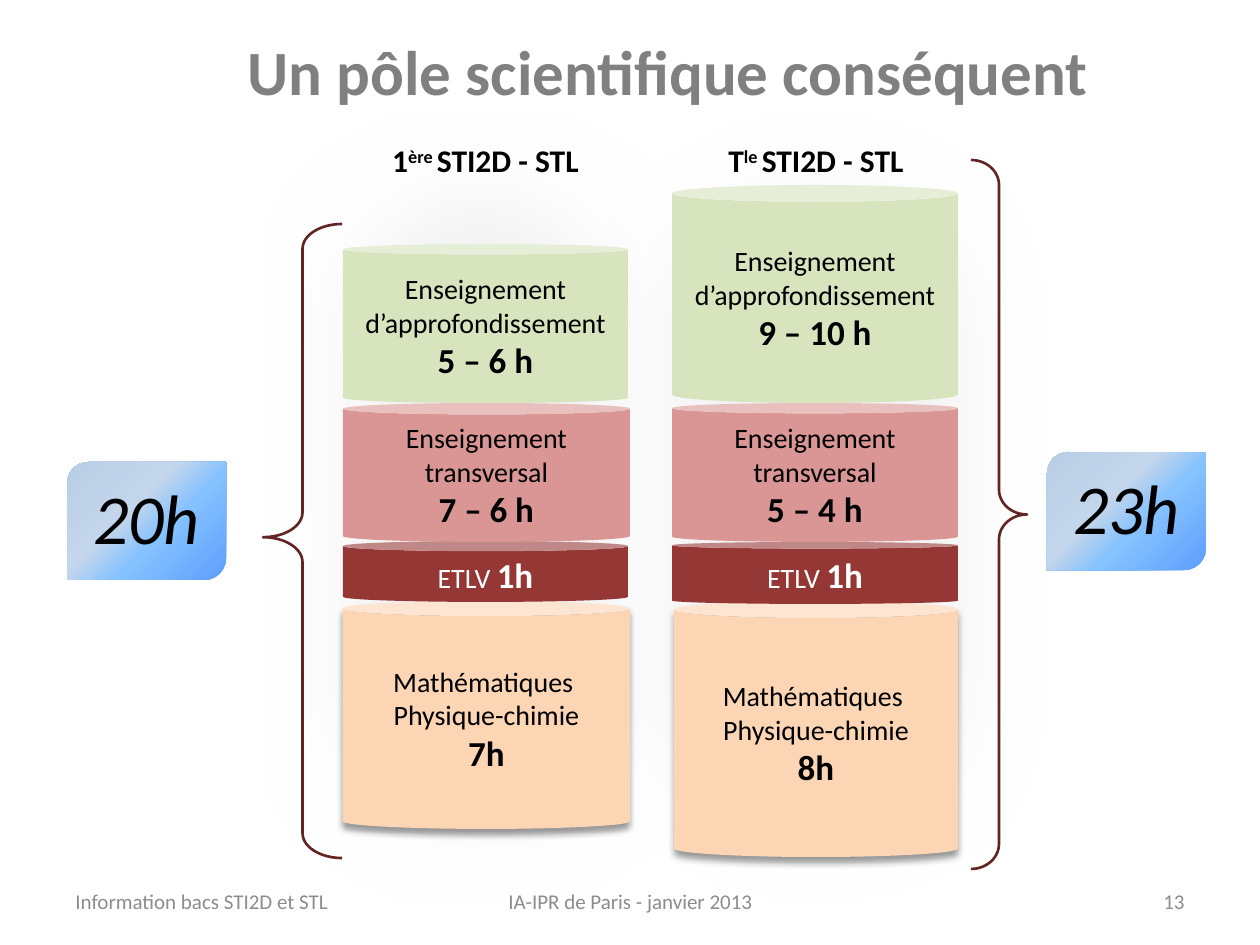
from lxml import etree
from pptx import Presentation
from pptx.dml.color import RGBColor
from pptx.enum.shapes import MSO_SHAPE
from pptx.enum.text import MSO_ANCHOR, MSO_AUTO_SIZE, PP_ALIGN
from pptx.oxml import parse_xml
from pptx.oxml.ns import qn
from pptx.util import Emu, Pt

PX = 914400 / 126
NAMESPACE = "http://schemas.openxmlformats.org/drawingml/2006/main"
CAN, DISK = MSO_SHAPE.CAN, MSO_SHAPE.FLOWCHART_MAGNETIC_DISK
LEFT_BRACE, RIGHT_BRACE = MSO_SHAPE.LEFT_BRACE, MSO_SHAPE.RIGHT_BRACE
BADGE = MSO_SHAPE.ROUND_2_DIAG_RECTANGLE
LEFT, CENTER, RIGHT = PP_ALIGN.LEFT, PP_ALIGN.CENTER, PP_ALIGN.RIGHT
TOP, MIDDLE = MSO_ANCHOR.TOP, MSO_ANCHOR.MIDDLE

BLACK = RGBColor(0x00, 0x00, 0x00)
WHITE = RGBColor(0xFF, 0xFF, 0xFF)
TITLE_GREY = RGBColor(0x80, 0x80, 0x80)
FOOTER_GREY = RGBColor(0x8C, 0x8C, 0x8C)
DISK_GREY = RGBColor(0xF2, 0xF2, 0xF2)
ORANGE = RGBColor(0xFC, 0xD5, 0xB5)
DARK_RED = RGBColor(0x95, 0x37, 0x35)
PINK = RGBColor(0xD9, 0x96, 0x94)
GREEN = RGBColor(0xD7, 0xE4, 0xBD)
BRACE_RED = RGBColor(0x63, 0x25, 0x23)
BADGE_STOPS = [(0, RGBColor(0x5E, 0x9E, 0xFF)), (40, RGBColor(0x85, 0xC2, 0xFF)),
               (60, RGBColor(0xC4, 0xD6, 0xEB)), (100, RGBColor(0xB9, 0xCD, 0xE5))]

TITLE = "Un pôle scientifique conséquent"
DISKS = [(591, 97, 456, 823), (263, 96, 435, 823)]

# Subjects: name lines, fill, text colour, hours on the same line, shadow
MATHS = (["Mathématiques ", "Physique-chimie"], ORANGE, BLACK, False, True)
ETLV = (["ETLV "], DARK_RED, WHITE, True, False)
TRANSVERSAL = (["Enseignement transversal"], PINK, BLACK, False, False)
DEEPENING = (["Enseignement d’approfondissement"], GREEN, BLACK, False, False)

# Classes: heading box and parts, then cylinders as subject, hours, box, lid
CLASSES = [
    ((343, 135, 285, 50), ("1", "ère "), [
        (MATHS, "7h", (343, 601, 287, 228), 0.067),
        (ETLV, "1h", (343, 541, 285, 61), 0.168),
        (TRANSVERSAL, "7 – 6 h", (343, 403, 287, 139), 0.083),
        (DEEPENING, "5 – 6 h", (343, 244, 285, 159), 0.066)]),
    ((674, 135, 284, 50), ("T", "le "), [
        (MATHS, "8h", (674, 601, 284, 256), 0.067),
        (ETLV, "1h", (672, 542, 286, 62), 0.108),
        (TRANSVERSAL, "5 – 4 h", (672, 403, 286, 139), 0.075),
        (DEEPENING, "9 – 10 h", (672, 185, 286, 218), 0.077)]),
]
BRACES = [(LEFT_BRACE, (263, 224, 79, 634), (0.313, 0.494)),
          (RIGHT_BRACE, (971, 160, 56, 709), (0.445, 0.5))]
BADGES = [("20h", (67, 462, 159, 118)), ("23h", (1047, 452, 159, 118))]
FOOTERS = [("Information bacs STI2D et STL", (63, 876, 294, 50), LEFT),
           ("IA-IPR de Paris - janvier 2013", (431, 876, 399, 50), CENTER),
           ("13", (903, 876, 294, 50), RIGHT)]


def to_emu(box):
    return [Emu(round(length * PX)) for length in box]


def write(shape, paragraphs, colour, align=CENTER, anchor=MIDDLE):
    """Fill a shape with paragraphs, each a list of (text, size, bold) runs."""
    frame = shape.text_frame
    frame.word_wrap = True
    frame.auto_size = MSO_AUTO_SIZE.NONE
    frame.vertical_anchor = anchor
    for index, runs in enumerate(paragraphs):
        paragraph = frame.add_paragraph() if index else frame.paragraphs[0]
        paragraph.alignment = align
        paragraph.font.name = "Calibri"
        paragraph.font.color.rgb = colour
        for text, size, bold in runs:
            run = paragraph.add_run()
            run.text = text
            run.font.size = Pt(size)
            run.font.bold = bold
    return frame


def add_shape(slide, kind, box, fill=None, adjustments=()):
    shape = slide.shapes.add_shape(kind, *to_emu(box))
    shape.shadow.inherit = False
    shape.line.fill.background()
    if fill is None:
        shape.fill.background()
    else:
        shape.fill.solid()
        shape.fill.fore_color.rgb = fill
    for index, value in enumerate(adjustments):
        shape.adjustments[index] = value
    return shape


def add_effect(shape, name, **attributes):
    effects = shape._element.spPr.find(qn("a:effectLst"))
    return etree.SubElement(effects, qn(name), attributes)


def add_cylinder(slide, subject, hours, box, lid):
    names, fill, colour, same_line, shadow = subject
    can = add_shape(slide, CAN, box, fill, [lid])
    paragraphs = [[(name, 16, False)] for name in names]
    if same_line:
        paragraphs[-1].append((hours, 20, True))
    else:
        paragraphs.append([(hours, 20, True)])
    write(can, paragraphs, colour)
    if shadow:
        outer = add_effect(can, "a:outerShdw", blurRad=str(Pt(4)), dist=str(Pt(3)),
                           dir="5400000", rotWithShape="0")
        black = etree.SubElement(outer, qn("a:srgbClr"), val="000000")
        etree.SubElement(black, qn("a:alpha"), val="40000")


def add_badge(slide, text, box):
    badge = add_shape(slide, BADGE, box, WHITE, [0.182, 0])
    stops = "".join(f'<a:gs pos="{position * 1000}"><a:srgbClr val="{colour}"/></a:gs>'
                    for position, colour in BADGE_STOPS)
    gradient = parse_xml(f'<a:gradFill xmlns:a="{NAMESPACE}" rotWithShape="1"><a:gsLst>{stops}'
                         '</a:gsLst><a:lin ang="13500000" scaled="0"/></a:gradFill>')
    properties = badge._element.spPr
    properties.replace(properties.find(qn("a:solidFill")), gradient)
    frame = write(badge, [[(text, 40, False)]], BLACK, anchor=TOP)
    frame.paragraphs[0].font.italic = True


def main():
    presentation = Presentation()
    presentation.slide_width, presentation.slide_height = to_emu((1260, 945))
    slide = presentation.slides.add_slide(presentation.slide_layouts[5])

    title = slide.shapes.title
    title.left, title.top, title.width, title.height = to_emu((105, 26, 1126, 90))
    write(title, [[(TITLE, 36, True)]], TITLE_GREY, anchor=TOP)

    for box in DISKS:
        add_effect(add_shape(slide, DISK, box, DISK_GREY), "a:softEdge", rad=str(Pt(50)))
    for box, (level, suffix), cylinders in CLASSES:
        heading = slide.shapes.add_textbox(*to_emu(box))
        parts = [(part, 18, True) for part in (level, suffix, "STI2D - STL")]
        frame = write(heading, [parts], BLACK, anchor=TOP)
        frame.paragraphs[0].runs[1]._r.get_or_add_rPr().set("baseline", "30000")
        for cylinder in cylinders:
            add_cylinder(slide, *cylinder)
    for kind, box, adjustments in BRACES:
        brace = add_shape(slide, kind, box, adjustments=adjustments)
        brace.line.color.rgb = BRACE_RED
        brace.line.width = Pt(1.5)
    for text, box in BADGES:
        add_badge(slide, text, box)
    for text, box, align in FOOTERS:
        footer = slide.shapes.add_textbox(*to_emu(box))
        write(footer, [[(text, 12, False)]], FOOTER_GREY, align)

    presentation.save("out.pptx")


if __name__ == "__main__":
    main()
